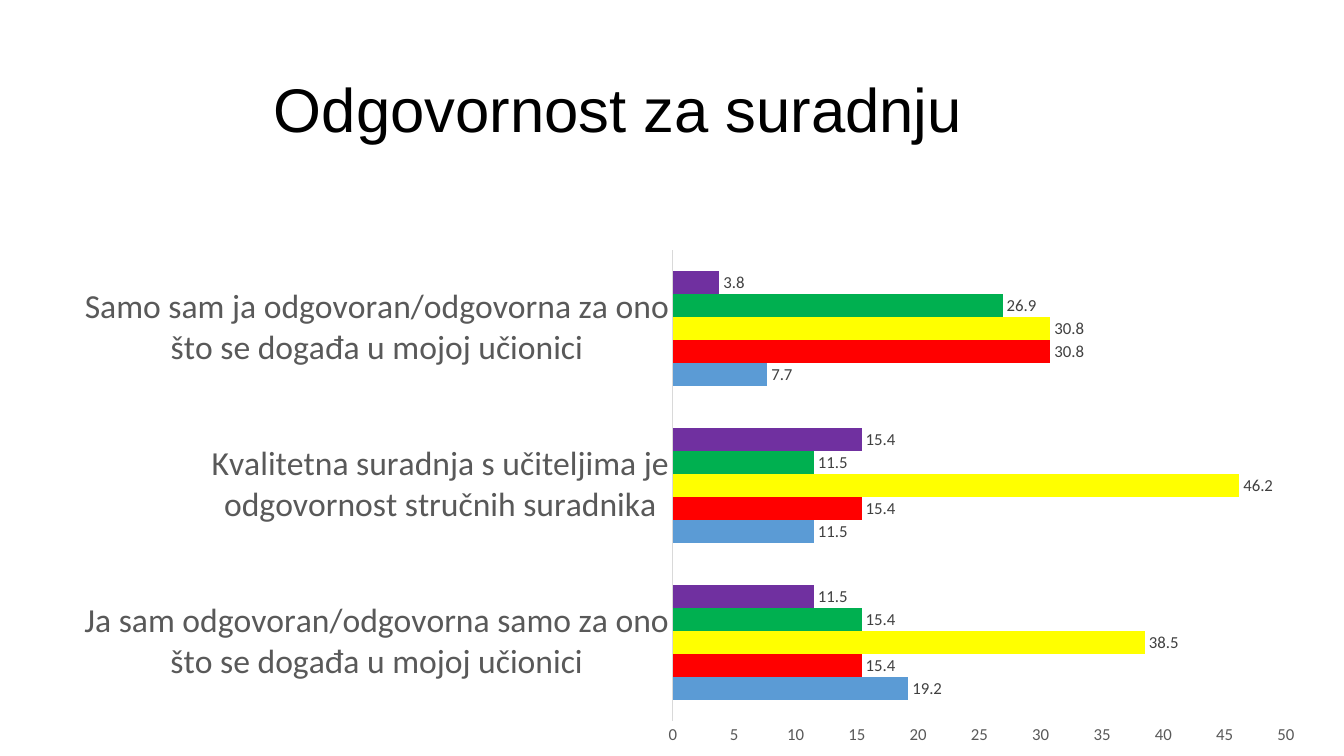
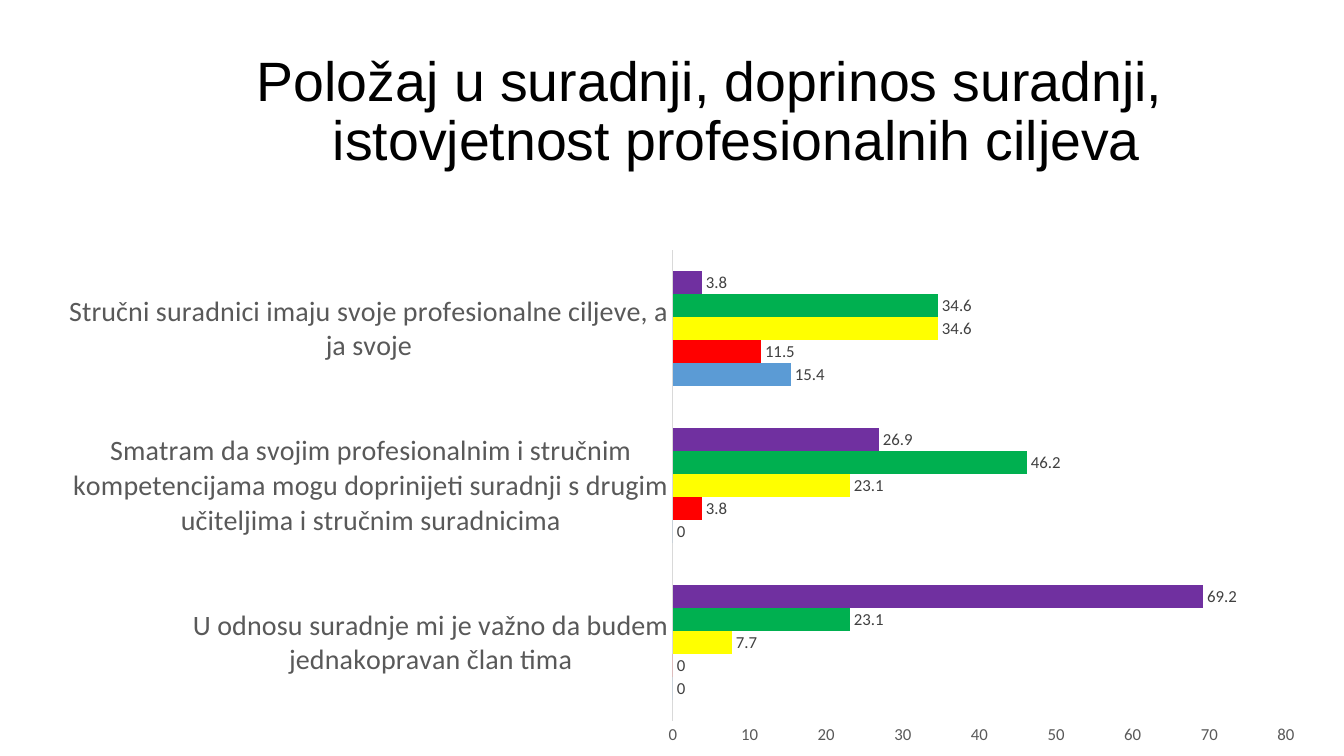
from pptx import Presentation
from pptx.chart.data import CategoryChartData
from pptx.dml.color import RGBColor
from pptx.enum.chart import XL_CHART_TYPE as ChartType
from pptx.enum.chart import XL_LABEL_POSITION as LabelPosition
from pptx.enum.chart import XL_TICK_MARK as TickMark
from pptx.enum.text import MSO_ANCHOR as Anchor
from pptx.oxml import parse_xml
from pptx.oxml.ns import nsdecls
from pptx.util import Pt

EMU_PER_PX = 914400 / 100.8
BLACK = RGBColor(0x00, 0x00, 0x00)
AXIS_GRAY = RGBColor(0x59, 0x59, 0x59)
LABEL_GRAY = RGBColor(0x40, 0x40, 0x40)
LINE_GRAY = RGBColor(0xD9, 0xD9, 0xD9)
BLUE = RGBColor(0x5B, 0x9B, 0xD5)
RED = RGBColor(0xFF, 0x00, 0x00)
YELLOW = RGBColor(0xFF, 0xFF, 0x00)
GREEN = RGBColor(0x00, 0xB0, 0x50)
PURPLE = RGBColor(0x70, 0x30, 0xA0)
BAR_COLORS = (BLUE, RED, YELLOW, GREEN, PURPLE)

# Each statement has one share per bar, in the order of BAR_COLORS.
RESPONSIBILITY = {
    "Ja sam odgovoran/odgovorna samo za ono što se događa u mojoj učionici":
        (19.2, 15.4, 38.5, 15.4, 11.5),
    "Kvalitetna suradnja s učiteljima je odgovornost stručnih suradnika":
        (11.5, 15.4, 46.2, 11.5, 15.4),
    "Samo sam ja odgovoran/odgovorna za ono što se događa u mojoj učionici":
        (7.7, 30.8, 30.8, 26.9, 3.8),
}
POSITION = {
    "U odnosu suradnje mi je važno da budem jednakopravan član tima":
        (0, 0, 7.7, 23.1, 69.2),
    "Smatram da svojim profesionalnim i stručnim kompetencijama mogu "
    "doprinijeti suradnji s drugim učiteljima i stručnim suradnicima":
        (0, 3.8, 23.1, 46.2, 26.9),
    "Stručni suradnici imaju svoje profesionalne ciljeve, a ja svoje":
        (15.4, 11.5, 34.6, 34.6, 3.8),
}


def px(length):
    return round(length * EMU_PER_PX)


def style_font(font, size, color, name="Calibri"):
    font.name = name
    font.size = Pt(size)
    font.color.rgb = color


def set_inner_plot(chart, fractions):
    """Fix the area between the axes, as fractions of the chart frame."""
    plot_area = chart.element.xpath("c:chart/c:plotArea")[0]
    for layout in plot_area.xpath("c:layout"):
        plot_area.remove(layout)
    sizes = "".join(f'<c:{tag} val="{value}"/>'
                    for tag, value in zip("xywh", fractions))
    plot_area.insert(0, parse_xml(
        f'<c:layout {nsdecls("c")}><c:manualLayout>'
        '<c:layoutTarget val="inner"/><c:xMode val="edge"/>'
        f'<c:yMode val="edge"/>{sizes}</c:manualLayout></c:layout>'))


class Deck:
    WIDTH, HEIGHT = 1344, 756
    TITLE_BOX = (93, 40, 1159, 146)
    CHART_BOX = (56, 202, 1249, HEIGHT - 202)
    PLOT_BOX = (617, 48, 613, 471)  # within the chart

    def __init__(self):
        self.presentation = Presentation()
        self.presentation.slide_width = px(self.WIDTH)
        self.presentation.slide_height = px(self.HEIGHT)
        self.slide = None

    def new_slide(self):
        layout = self.presentation.slide_layouts[6]
        self.slide = self.presentation.slides.add_slide(layout)

    def title(self, text, *, size, first_indent, next_indent=0):
        """Write a title; lines after a \\v break start at next_indent."""
        box = self.slide.shapes.add_textbox(*map(px, self.TITLE_BOX))
        frame = box.text_frame
        frame.word_wrap = True
        frame.vertical_anchor = Anchor.MIDDLE
        paragraph = frame.paragraphs[0]
        paragraph.text = text
        paragraph.line_spacing = 0.9
        properties = paragraph._p.get_or_add_pPr()
        properties.set("marL", str(px(next_indent)))
        properties.set("indent", str(px(first_indent - next_indent)))
        for run in paragraph.runs:
            style_font(run.font, size, BLACK, "Arial")

    def bar_chart(self, statements, *, category_size, maximum, step):
        data = CategoryChartData()
        data.categories = list(statements)
        for shares in zip(*statements.values()):
            data.add_series("", shares)
        chart = self.slide.shapes.add_chart(
            ChartType.BAR_CLUSTERED, *map(px, self.CHART_BOX), data).chart
        style_font(chart.font, 10, BLACK)
        chart.has_title = False
        chart.has_legend = False
        frame_sizes = self.CHART_BOX[2:] * 2
        set_inner_plot(chart, [length / size for length, size
                               in zip(self.PLOT_BOX, frame_sizes)])
        self.style_axes(chart, category_size, maximum, step)
        self.style_series(chart.plots[0])

    def style_axes(self, chart, category_size, maximum, step):
        category, value = chart.category_axis, chart.value_axis
        for axis, size in ((category, category_size), (value, 12)):
            axis.major_tick_mark = axis.minor_tick_mark = TickMark.NONE
            axis.has_major_gridlines = False
            style_font(axis.tick_labels.font, size, AXIS_GRAY)
        category.format.line.color.rgb = LINE_GRAY
        category.format.line.width = Pt(0.75)
        value.format.line.fill.background()
        value.minimum_scale = 0
        value.maximum_scale = maximum
        value.major_unit = step

    def style_series(self, plot):
        plot.gap_width = 182
        plot.overlap = 0
        plot.vary_by_categories = False
        for series, color in zip(plot.series, BAR_COLORS):
            series.format.fill.solid()
            series.format.fill.fore_color.rgb = color
            series.invert_if_negative = False
            labels = series.data_labels
            labels.show_value = True
            labels.position = LabelPosition.OUTSIDE_END
            style_font(labels.font, 12, LABEL_GRAY)


def main():
    deck = Deck()

    deck.new_slide()
    deck.title("Odgovornost za suradnju", size=44, first_indent=171)
    deck.bar_chart(RESPONSIBILITY, category_size=24, maximum=50, step=5)

    deck.new_slide()
    deck.title("Položaj u suradnji, doprinos suradnji,\v"
               "istovjetnost profesionalnih ciljeva",
               size=39.6, first_indent=154, next_indent=230)
    deck.bar_chart(POSITION, category_size=20, maximum=80, step=10)

    deck.presentation.save("out.pptx")


if __name__ == "__main__":
    main()
